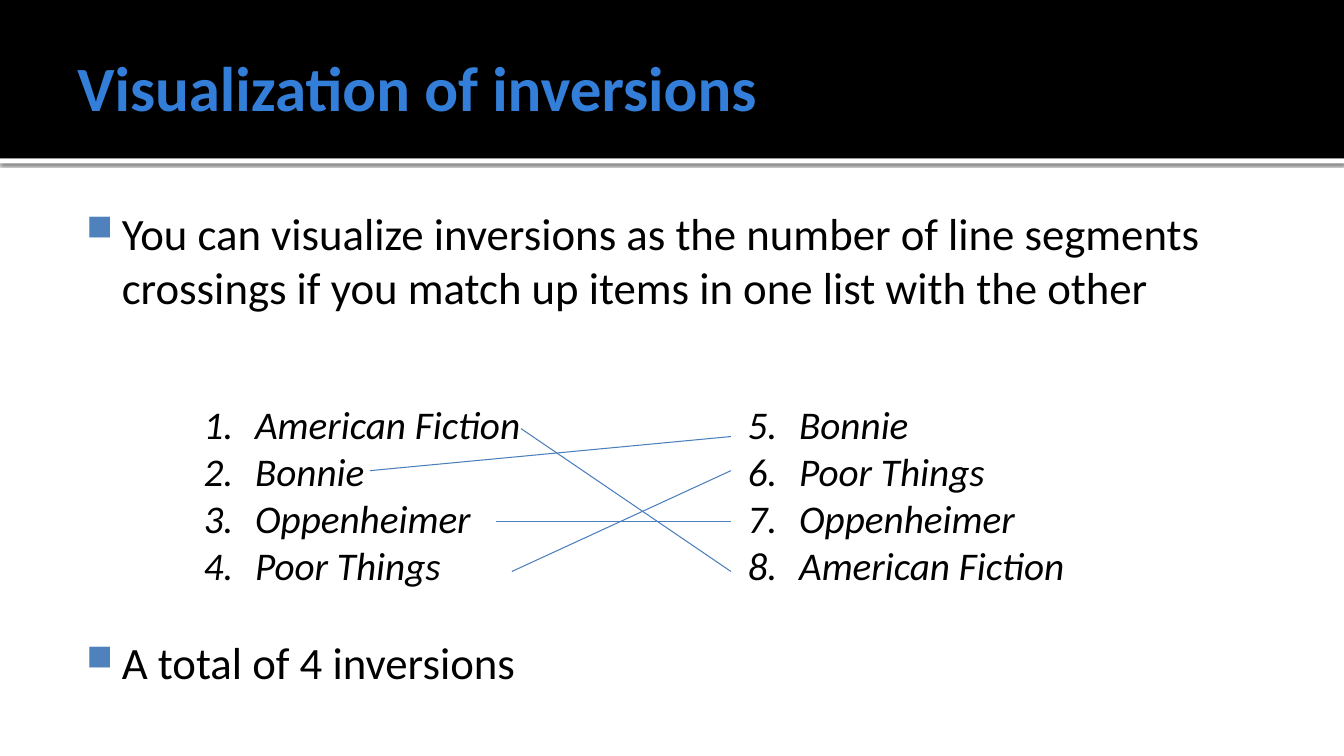
from lxml import etree
from pptx import Presentation
from pptx import util as u
from pptx.dml.color import RGBColor
from pptx.enum import shapes, text
from pptx.oxml.ns import qn

WIDTH = 33.87
FRAME = {"word_wrap": True, "auto_size": text.MSO_AUTO_SIZE.NONE}
TITLE = {"name": "Calibri", "size": u.Pt(45), "bold": True}
BODY = {"name": "Calibri", "size": u.Pt(32)}
ITEM = {"name": "Calibri", "size": u.Pt(28), "italic": True}
BEFORE = ["American Fiction", "Bonnie", "Oppenheimer", "Poor Things"]
AFTER = ["Bonnie", "Poor Things", "Oppenheimer", "American Fiction"]
MATCHES = [
    (12.5, 13.13, 18.42, 13.13),
    (12.9, 14.4, 18.42, 11.86),
    (13.13, 10.8, 18.42, 14.4),
    (9.32, 11.86, 18.42, 11),
]


def color(value):
    return RGBColor.from_string(value)


def apply(target, values):
    for name, value in values.items():
        setattr(target, name, value)


def add_element(parent, tag, **attributes):
    element = etree.SubElement(parent, qn(tag))
    for name, value in attributes.items():
        element.set(name, str(value))
    return element


def add_band(page, top, height, fill):
    band = page.shapes.add_shape(
        shapes.MSO_SHAPE.RECTANGLE, 0, u.Cm(top), u.Cm(WIDTH), u.Cm(height))
    band.shadow.inherit = False
    band.fill.solid()
    band.fill.fore_color.rgb = color(fill)
    band.line.fill.background()
    return band


def add_shadow(band):
    effects = band._element.spPr.find(qn("a:effectLst"))
    shadow = add_element(effects, "a:outerShdw", blurRad=u.Pt(2.5),
                         dist=u.Pt(0.8), dir=90 * 60000, rotWithShape=0)
    black = add_element(shadow, "a:srgbClr", val="000000")
    add_element(black, "a:alpha", val=60000)


def add_box(page, place, margins=(0.25, 0.13, 0.25, 0.13), **values):
    frame = page.shapes.add_textbox(*map(u.Cm, place)).text_frame
    sides = ("margin_left", "margin_top", "margin_right", "margin_bottom")
    apply(frame, FRAME | dict(zip(sides, map(u.Cm, margins))) | values)
    return frame


def add_para(frame, words, font, fill="000000"):
    first = frame.paragraphs[0]
    para = frame.add_paragraph() if first.runs else first
    span = para.add_run()
    span.text = words
    apply(span.font, font)
    span.font.color.rgb = color(fill)
    return para


def indent(para, hang, left):
    properties = para._p.get_or_add_pPr()
    properties.set("marL", str(u.Cm(left)))
    properties.set("indent", str(-u.Cm(hang)))
    return properties


def add_bullet(frame, words):
    para = add_para(frame, words, BODY)
    properties = indent(para, 0.89, 1.22)
    tint = add_element(properties, "a:buClr")
    add_element(tint, "a:srgbClr", val="4F81BD")
    add_element(properties, "a:buSzPct", val=80000)
    add_element(properties, "a:buChar", char="■")
    return para


def add_ranking(page, left, films, start):
    frame = add_box(page, (left, 9.96, 10.4, 5.2))
    for film in films:
        properties = indent(add_para(frame, film, ITEM), 1.3, 1.3)
        add_element(properties, "a:buFont", typeface="+mj-lt")
        add_element(properties, "a:buAutoNum", type="arabicPeriod", startAt=start)


def add_match(page, ends):
    line = page.shapes.add_connector(
        shapes.MSO_CONNECTOR.STRAIGHT, *map(u.Cm, ends))
    line.line.color.rgb = color("4B7EBC")
    line.line.width = u.Pt(0.75)
    add_element(line._element.spPr, "a:effectLst")


def main():
    deck = Presentation()
    deck.slide_width, deck.slide_height = u.Cm(WIDTH), u.Cm(19.05)
    page = deck.slides.add_slide(deck.slide_layouts[6])

    add_shadow(add_band(page, 3.99, 0.13, "FFFFFF"))
    add_band(page, 0, 3.99, "000000")
    title = add_box(page, (1.7, 0.43, 30.48, 3.48), (0.25, 0.13, 0.13, 0.13),
                    vertical_anchor=text.MSO_ANCHOR.MIDDLE)
    add_para(title, "Visualization of inversions", TITLE, "337ED9")

    body = add_box(page, (1.7, 4.93, 30.48, 12.85), (0.15, 0.25, 0.25, 0.13))
    add_bullet(body, "You can visualize inversions as the number of line segments "
                     "crossings if you match up items in one list with the other")
    total = add_bullet(body, "A total of 4 inversions")
    total.space_before = u.Pt(230)

    add_ranking(page, 4.88, BEFORE, 1)
    add_ranking(page, 18.59, AFTER, 5)
    for ends in MATCHES:
        add_match(page, ends)

    deck.save("out.pptx")


if __name__ == "__main__":
    main()
